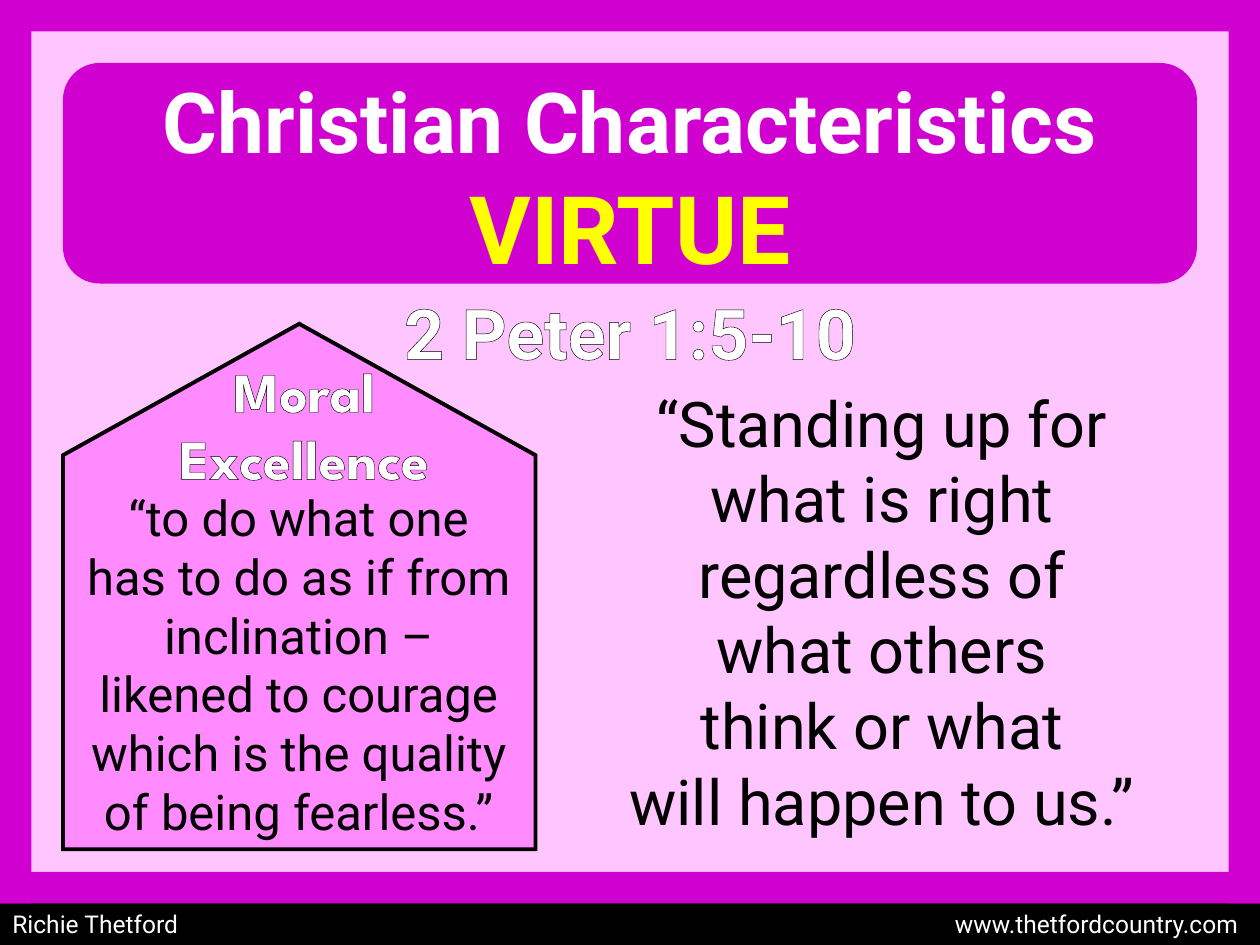
from lxml import etree
from pptx import Presentation
from pptx.dml.color import RGBColor
from pptx.enum import shapes, text
from pptx.oxml import ns
from pptx.util import Inches, Pt

MAGENTA = "D000D0"
BLACK = "000000"
WHITE = "FFFFFF"
BORDER = 0.25


def color(value):
    """Turn a hex string into a colour."""
    return RGBColor.from_string(value)


def add_block(slide, kind, box, fill, line=None):
    """Add a flat preset shape, outlined only when a line colour is given."""
    shape = slide.shapes.add_shape(kind, *map(Inches, box))
    shape.shadow.inherit = False
    shape.fill.solid()
    shape.fill.fore_color.rgb = color(fill)
    if line:
        shape.line.color.rgb = color(line)
        shape.line.width = Pt(2.25)
        outline = shape.element.find(".//" + ns.qn("a:ln"))
        etree.SubElement(outline, ns.qn("a:miter"), lim="800000")
    else:
        shape.line.fill.background()
    return shape


def style_paragraph(paragraph, size, fill, bold=False, font="Roboto",
                    align=text.PP_ALIGN.CENTER):
    """Set the alignment and font of a paragraph."""
    paragraph.alignment = align
    paragraph.font.name = font
    paragraph.font.size = Pt(size)
    paragraph.font.bold = bold
    paragraph.font.color.rgb = color(fill)


def add_text(slide, box, lines, size, fill=BLACK, **style):
    """Add a wrapped text box with one paragraph for each line."""
    shape = slide.shapes.add_textbox(*map(Inches, box))
    frame = shape.text_frame
    frame.word_wrap = True
    frame.text = "\n".join(lines)
    for paragraph in frame.paragraphs:
        style_paragraph(paragraph, size, fill, **style)
    return shape


def outline_text(shape, width):
    """Draw a black outline around the letters of a shape."""
    for run in shape.element.iter(ns.qn("a:r")):
        line = etree.Element(ns.qn("a:ln"), w=str(Pt(width)))
        fill = etree.SubElement(line, ns.qn("a:solidFill"))
        etree.SubElement(fill, ns.qn("a:srgbClr"), val=BLACK)
        run.get_or_add_rPr().insert(0, line)


def add_frame(slide, left, top, width, height):
    """Add the four border strips inside the given box."""
    for strip in (
        (left, top, BORDER, height),
        (left + width - BORDER, top, BORDER, height),
        (left, top, width, BORDER),
        (left, top + height - BORDER, width, BORDER),
    ):
        add_block(slide, shapes.MSO_SHAPE.RECTANGLE, strip, MAGENTA)


def add_banner(slide, left, top, width, height):
    """Add the rounded banner and set the title over it."""
    banner = add_block(slide, shapes.MSO_SHAPE.ROUNDED_RECTANGLE,
                       (left, top, width, height), MAGENTA)
    title = slide.shapes.title
    banner.element.addnext(title.element)
    title.left, title.top = Inches(left - 0.25), Inches(top)
    title.width, title.height = Inches(width + 0.5), Inches(height + 0.07)
    frame = title.text_frame
    frame.text = "Christian Characteristics\nVIRTUE"
    frame.auto_size = text.MSO_AUTO_SIZE.NONE
    frame.vertical_anchor = text.MSO_ANCHOR.TOP
    for paragraph, size, fill in zip(frame.paragraphs, (48, 54), (WHITE, "FFFF00")):
        style_paragraph(paragraph, size, fill, bold=True)


def add_definition(slide, left, top, width, height):
    """Add the house-shaped panel with its heading and definition."""
    shift = (width - height) / 2
    house = add_block(slide, shapes.MSO_SHAPE.PENTAGON,
                      (left + shift, top - shift, height, width), "FF8BFF", BLACK)
    house.rotation = 270
    house.adjustments[0] = 0.278
    add_text(slide, (left + 0.08, top + 1.25, 3.58, 2.93),
             ["“to do what one has to do as if from inclination – likened to "
              "courage which is the quality of being fearless.”"], 28)
    heading = add_text(slide, (left + 0.08, top + 0.21, 3.67, 1.18),
                       ["Moral", "Excellence"], 32, WHITE, bold=True,
                       font="League Spartan")
    outline_text(heading, 0.75)


def add_footer(slide, left, top, width, height):
    """Add the bar with the author on the left and the address on the right."""
    bar = add_block(slide, shapes.MSO_SHAPE.RECTANGLE,
                    (left, top, width, height), BLACK)
    frame = bar.text_frame
    frame.text = "Richie Thetford\twww.thetfordcountry.com"
    style_paragraph(frame.paragraphs[0], 14, WHITE, align=text.PP_ALIGN.LEFT)
    properties = bar.element.find(".//" + ns.qn("a:pPr"))
    tabs = etree.Element(ns.qn("a:tabLst"))
    etree.SubElement(tabs, ns.qn("a:tab"), pos=str(Inches(width - 0.27)), algn="r")
    properties.insert(0, tabs)


def main():
    """Build and save the slide."""
    presentation = Presentation()
    presentation.slide_width, presentation.slide_height = Inches(10), Inches(7.5)
    slide = presentation.slides.add_slide(presentation.slide_layouts[5])
    slide.background.fill.solid()
    slide.background.fill.fore_color.rgb = color("FFC5FF")

    add_definition(slide, 0.5, 2.57, 3.75, 4.17)
    add_text(slide, (4.5, 3, 5, 3.74),
             ["“Standing up for\vwhat is right regardless of\vwhat others\v"
              "think or what\vwill happen to us.”"], 36)
    add_footer(slide, 0, 7.16, 10, 0.34)
    add_frame(slide, 0, 0, 10, 7.17)
    add_banner(slide, 0.5, 0.5, 9, 1.75)
    verse = add_text(slide, (0.25, 2.25, 9.5, 0.77), ["2 Peter 1:5-10"],
                     40, WHITE, bold=True)
    outline_text(verse, 1)
    presentation.save("out.pptx")


if __name__ == "__main__":
    main()
